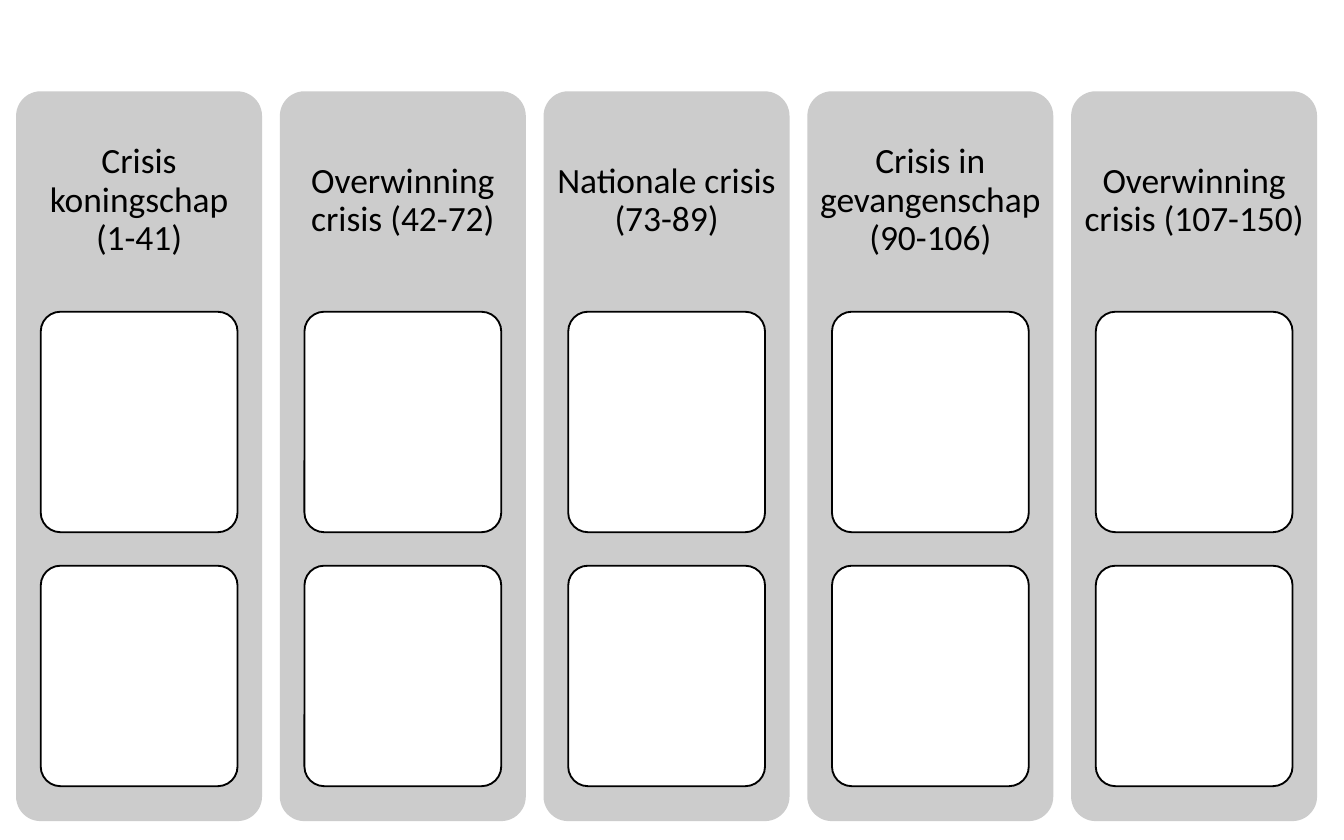
from dataclasses import dataclass
from typing import Optional

from pptx import Presentation
from pptx.dml.color import RGBColor
from pptx.enum.shapes import MSO_SHAPE as Preset
from pptx.enum.text import MSO_ANCHOR as Anchor, PP_ALIGN as Align
from pptx.slide import Slide
from pptx.util import Inches, Pt

COLORS = {"panel": "CCCCCC", "card": "FFFFFF", "ink": "000000"}
HEADINGS = [
    "Crisis koningschap (1-41)",
    "Overwinning crisis (42-72)",
    "Nationale crisis (73-89)",
    "Crisis in gevangenschap (90-106)",
    "Overwinning crisis (107-150)",
]
SLIDE_WIDTH, SLIDE_HEIGHT = 10, 6.25
FIRST_LEFT, LAST_LEFT = 0.12, 7.97
COLUMN_PITCH = (LAST_LEFT - FIRST_LEFT) / (len(HEADINGS) - 1)
PANEL_TOP, PANEL_WIDTH, PANEL_HEIGHT = 0.68, 1.83, 5.43
HEADING_HEIGHT = PANEL_HEIGHT * 0.3
CARD_WIDTH, CARD_HEIGHT = PANEL_WIDTH * 0.8, 1.64
CARD_TOP, CARD_PITCH, CARD_ROWS = 2.32, 1.89, 2
INSET = Inches(0.08)
FRAME_FORMAT = {
    "word_wrap": True,
    "vertical_anchor": Anchor.MIDDLE,
    "margin_left": INSET,
    "margin_top": INSET,
    "margin_right": INSET,
    "margin_bottom": INSET,
}
PARAGRAPH_FORMAT = {"alignment": Align.CENTER, "line_spacing": 0.9}
FONT_FORMAT = {"name": "Calibri", "size": Pt(19)}


@dataclass(frozen=True)
class Box:
    left: float
    top: float
    width: float
    height: float

    def lengths(self) -> list[int]:
        return [Inches(n) for n in (self.left, self.top, self.width, self.height)]


def color(name: str) -> RGBColor:
    return RGBColor.from_string(COLORS[name])


def apply_format(target: object, values: dict) -> None:
    for name, value in values.items():
        setattr(target, name, value)


def draw_rounded(slide: Slide, box: Box, fill: str, line: Optional[str] = None) -> None:
    shape = slide.shapes.add_shape(Preset.ROUNDED_RECTANGLE, *box.lengths())
    shape.adjustments[0] = 0.1
    shape.shadow.inherit = False
    shape.fill.solid()
    shape.fill.fore_color.rgb = color(fill)
    if line:
        shape.line.color.rgb = color(line)
        shape.line.width = Pt(1)
    else:
        shape.line.fill.background()


def draw_heading(slide: Slide, box: Box, text: str) -> None:
    frame = slide.shapes.add_textbox(*box.lengths()).text_frame
    apply_format(frame, FRAME_FORMAT)
    paragraph = frame.paragraphs[0]
    apply_format(paragraph, PARAGRAPH_FORMAT)
    run = paragraph.add_run()
    run.text = text
    apply_format(run.font, FONT_FORMAT)
    run.font.color.rgb = color("ink")


def draw_column(slide: Slide, column: int, heading: str) -> None:
    left = FIRST_LEFT + column * COLUMN_PITCH
    card_left = left + (PANEL_WIDTH - CARD_WIDTH) / 2
    draw_rounded(slide, Box(left, PANEL_TOP, PANEL_WIDTH, PANEL_HEIGHT), "panel")
    draw_heading(slide, Box(left, PANEL_TOP, PANEL_WIDTH, HEADING_HEIGHT), heading)
    for row in range(CARD_ROWS):
        top = CARD_TOP + row * CARD_PITCH
        draw_rounded(slide, Box(card_left, top, CARD_WIDTH, CARD_HEIGHT), "card", "ink")


def main() -> None:
    presentation = Presentation()
    presentation.slide_width = Inches(SLIDE_WIDTH)
    presentation.slide_height = Inches(SLIDE_HEIGHT)
    slide = presentation.slides.add_slide(presentation.slide_layouts[6])
    for column, heading in enumerate(HEADINGS):
        draw_column(slide, column, heading)
    presentation.save("out.pptx")


if __name__ == "__main__":
    main()
